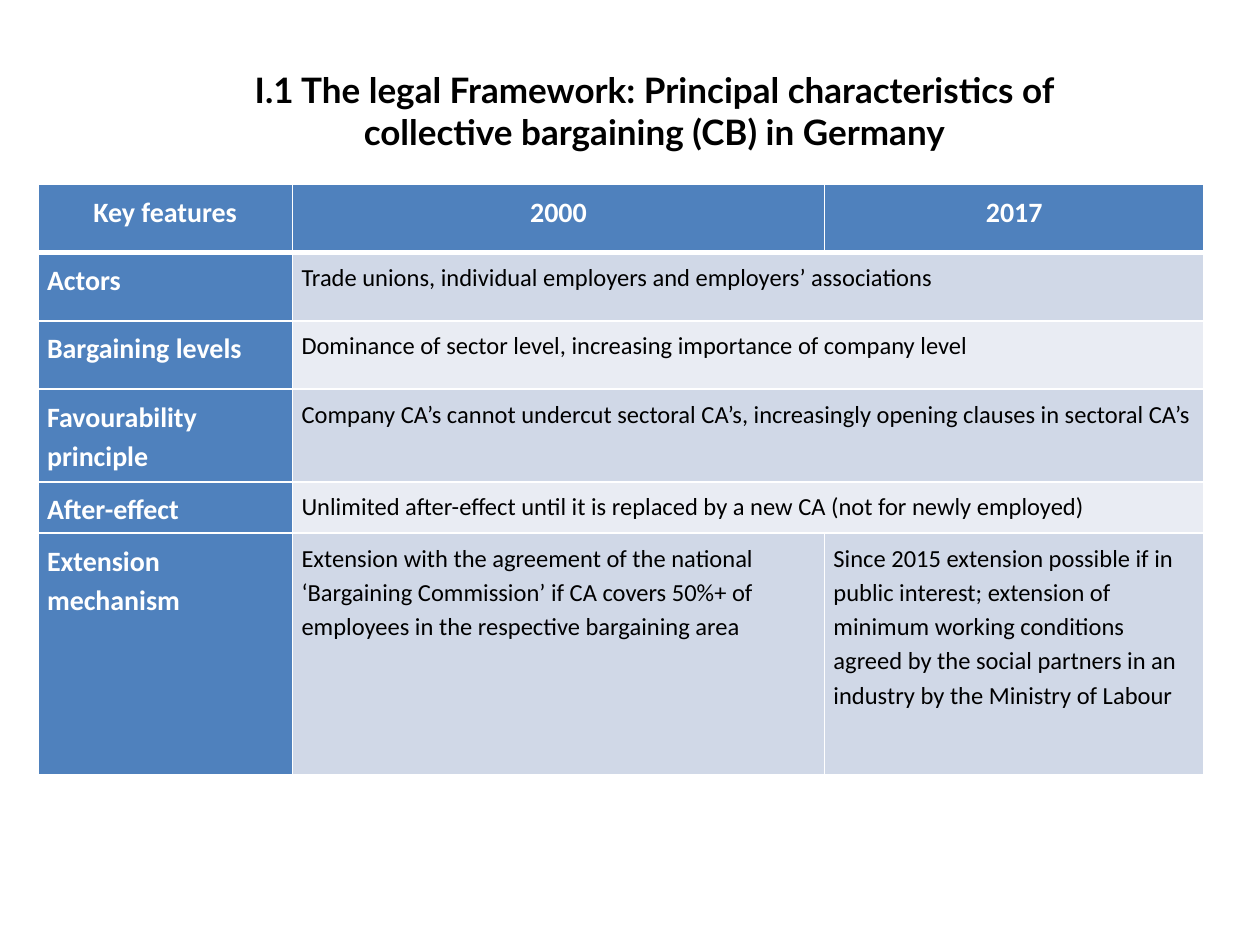
from lxml.etree import SubElement
from pptx import Presentation
from pptx.dml.color import RGBColor as RGB
from pptx.enum.text import MSO_ANCHOR as Anchor, PP_ALIGN as Align
from pptx.oxml.ns import qn
from pptx.util import Pt

HUES = {"head": "4F81BD", "odd": "D0D8E7", "even": "E9ECF3",
        "white": "FFFFFF", "black": "000000"}
WIDTHS = [145.4, 304, 217]
HEIGHTS = [39, 39, 39, 53, 28.5, 138.2]
ROWS = [
    ["Key features", "2000", "2017"],
    ["Actors", "Trade unions, individual employers and employers’ associations"],
    ["Bargaining levels",
     "Dominance of sector level, increasing importance of company level"],
    ["Favourability principle",
     "Company CA’s cannot undercut sectoral CA’s, increasingly opening "
     "clauses in sectoral CA’s"],
    ["After-effect",
     "Unlimited after-effect until it is replaced by a new CA "
     "(not for newly employed)"],
    ["Extension mechanism",
     "Extension with the agreement of the national ‘Bargaining Commission’ "
     "if CA covers 50%+ of employees in the respective bargaining area",
     "Since 2015 extension possible if in public interest; extension of "
     "minimum working conditions agreed by the social partners in an "
     "industry by the Ministry of Labour"],
]


def style(para, face, size, hue, bold):
    font = para.font
    font.name, font.size, font.bold = face, Pt(size), bold
    font.color.rgb = RGB.from_string(HUES[hue])


def rule(cell, row):
    """Draw white cell borders, thick between the header and the body."""
    props = cell._tc.get_or_add_tcPr()
    thick = {"T": row == 1, "B": row == 0}
    for side in "LRTB":
        width = Pt(3 if thick.get(side) else 0.96)
        line = SubElement(props, qn(f"a:ln{side}"), w=str(width))
        fill = SubElement(line, qn("a:solidFill"))
        SubElement(fill, qn("a:srgbClr"), val=HUES["white"])


deck = Presentation()
deck.slide_width, deck.slide_height = Pt(720), Pt(540)
slide = deck.slides.add_slide(deck.slide_layouts[6])

box = slide.shapes.add_textbox(Pt(116), Pt(21), Pt(516), Pt(84))
frame = box.text_frame
frame.word_wrap = True
frame.vertical_anchor = Anchor.MIDDLE
title = frame.paragraphs[0]
title.text = ("I.1 The legal Framework: Principal characteristics of "
              "collective bargaining (CB) in Germany")
title.alignment = Align.CENTER
style(title, "Lato", 20, "black", True)

table = slide.shapes.add_table(
    len(ROWS), len(WIDTHS), Pt(21.7), Pt(105.4),
    Pt(sum(WIDTHS)), Pt(sum(HEIGHTS))).table
for col, width in zip(table.columns, WIDTHS):
    col.width = Pt(width)
for row, height in zip(table.rows, HEIGHTS):
    row.height = Pt(height)

for r, texts in enumerate(ROWS):
    for c in range(len(WIDTHS)):
        cell = table.cell(r, c)
        head = r == 0 or c == 0
        rule(cell, r)
        cell.fill.solid()
        hue = "head" if head else "odd" if r % 2 else "even"
        cell.fill.fore_color.rgb = RGB.from_string(HUES[hue])
        cell.margin_left = cell.margin_right = Pt(5.2)
        cell.margin_top = cell.margin_bottom = Pt(3.6)
        if c < len(texts):
            para = cell.text_frame.paragraphs[0]
            para.text = texts[c]
            para.line_spacing = 1.15
            para.alignment = Align.CENTER if r == 0 else Align.LEFT
            style(para, "Calibri", 16 if head else 14,
                  "white" if head else "black", head)
    if len(texts) == 2:
        table.cell(r, 1).merge(table.cell(r, 2))

deck.save("out.pptx")
